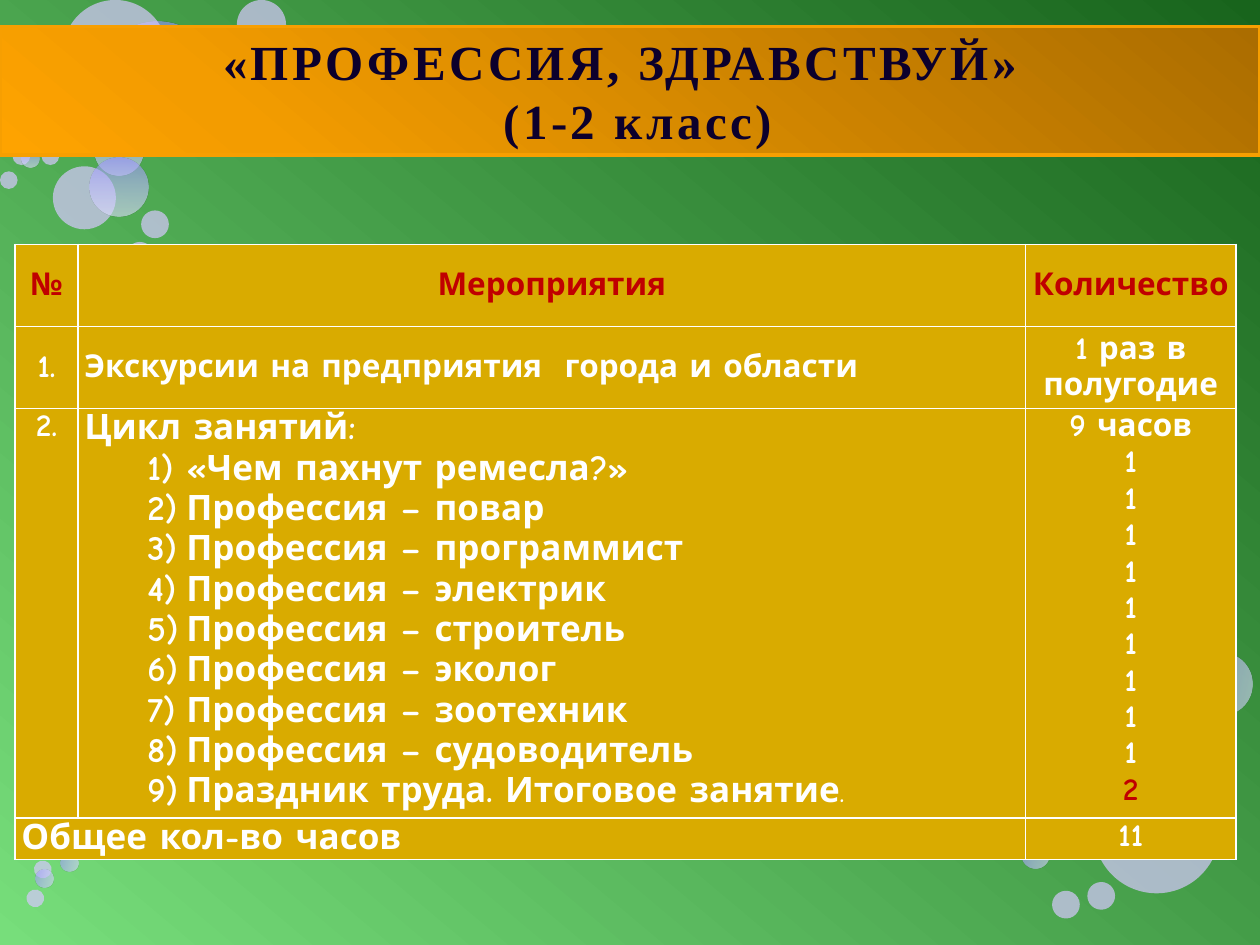
from lxml import etree
from pptx import Presentation
from pptx.dml.color import RGBColor
from pptx.enum.shapes import MSO_SHAPE
from pptx.enum.text import MSO_ANCHOR, MSO_AUTO_SIZE, PP_ALIGN
from pptx.oxml.ns import qn
from pptx.util import Inches, Pt

CENTER, LEFT = PP_ALIGN.CENTER, PP_ALIGN.LEFT
MIDDLE, TOP = MSO_ANCHOR.MIDDLE, MSO_ANCHOR.TOP
OVAL = MSO_SHAPE.OVAL

COLORS = {
    "ink": "0C002C", "red": "C00000", "white": "FFFFFF", "cell": "D9AB00",
    "frame": "F79F01", "bubble": "D7C8FE",
}
GREEN = [(0, "18641C"), (100, "77DE7B")]
ORANGE = [(0, "AB6D00"), (80, "F39C00"), (100, "FEA300")]
LILAC = [(0, "9890FF"), (50, "BFBBFF"), (100, "E0DEFF")]

# left, top, diameter, glossy
TOP_BUBBLES = [
    (0.75, 0.17, 1, True), (0.42, 1.32, 0.5, False), (0.75, 1, 0.39, True),
    (0.71, 1.25, 0.47, True), (0.5, 0, 0.83, False), (1.88, 0, 0.39, False),
    (1.83, 0.25, 0.47, True), (2.21, 0.33, 0.22, True), (1.12, 1.67, 0.22, False),
    (0.1, 1.17, 0.14, False), (1, 1.92, 0.22, False), (0, 1.36, 0.14, False),
    (0.17, 1.19, 0.14, True), (0.33, 1.17, 0.14, False),
]
BOTTOM_BUBBLES = [
    (8.68, 6.09, 1, False), (9.44, 5.18, 0.5, True), (9.07, 5.42, 0.39, False),
    (9.31, 5.44, 0.47, False), (8.59, 5.79, 0.83, True), (0.22, 6.47, 0.24, False),
    (8.08, 6.31, 0.47, False), (8.11, 6.67, 0.22, True), (8.35, 7.07, 0.22, False),
    (9.41, 4.79, 0.14, False), (8.63, 7, 0.22, False), (9.62, 4.74, 0.14, True),
    (9.42, 4.87, 0.14, True), (9.36, 5.02, 0.14, False), (0.27, 6.83, 0.14, False),
    (0.48, 6.78, 0.14, True), (0.28, 6.9, 0.14, True), (0.21, 7.06, 0.14, False),
]
TRADES = ["повар", "программист", "электрик", "строитель", "эколог",
          "зоотехник", "судоводитель"]
LESSONS = ["«Чем пахнут ремесла?»", *(f"Профессия – {trade}" for trade in TRADES),
           "Праздник труда. Итоговое занятие"]


def rgb(name):
    return RGBColor.from_string(COLORS[name])


def set_alpha(color, percent):
    etree.SubElement(color, qn("a:alpha")).set("val", str(percent * 1000))


def fill_gradient(fill, element, stops, angle, opacity=100):
    """Fill with any number of stops; angle is clockwise degrees."""
    fill.gradient()
    fill.gradient_angle = 360 - angle
    stop_list = element.find(f".//{qn('a:gsLst')}")
    for old_stop in list(stop_list):
        stop_list.remove(old_stop)
    for position, value in stops:
        stop = etree.SubElement(stop_list, qn("a:gs"), pos=str(position * 1000))
        color = etree.SubElement(stop, qn("a:srgbClr"), val=value)
        if opacity < 100:
            set_alpha(color, opacity)


def add_bubbles(slide, bubbles, tilted=False):
    for left, top, size, glossy in bubbles:
        bubble = slide.shapes.add_shape(
            OVAL, Inches(left), Inches(top), Inches(size), Inches(size))
        bubble.shadow.inherit = False
        bubble.line.fill.background()
        if glossy:
            fill_gradient(bubble.fill, bubble.element, LILAC, 90, 60)
        else:
            bubble.fill.solid()
            bubble.fill.fore_color.rgb = rgb("bubble")
            set_alpha(bubble.element.spPr.find(f".//{qn('a:srgbClr')}"), 70)
        if tilted:
            bubble.rotation = 103.3
            bubble.element.spPr.find(qn("a:xfrm")).set("flipV", "1")


def place_title(slide, left, top, width, height):
    title = slide.shapes.title
    title.left, title.top, title.width, title.height = left, top, width, height
    title.element.getparent().append(title.element)  # in front of the bubbles
    fill_gradient(title.fill, title.element, ORANGE, 130)
    title.line.color.rgb = rgb("frame")
    title.line.width = Pt(2)
    frame = title.text_frame
    frame.text = "«ПРОФЕССИЯ, ЗДРАВСТВУЙ» \v (1-2 класс)"
    frame.word_wrap = False
    frame.auto_size = MSO_AUTO_SIZE.NONE
    frame.vertical_anchor = MIDDLE
    heading = frame.paragraphs[0]
    heading.alignment = CENTER
    style_font(heading.font, 28, "ink", "Times New Roman")
    heading._p.pPr.find(qn("a:defRPr")).set("spc", "200")


def style_font(font, size, color, name="Comic Neue"):
    font.name, font.size, font.bold = name, Pt(size), True
    font.color.rgb = rgb(color)


def number_paragraph(paragraph):
    properties = paragraph._p.get_or_add_pPr()
    properties.set("marL", str(Inches(0.81)))
    properties.set("indent", str(Inches(-0.31)))
    numbering = etree.Element(qn("a:buAutoNum"), type="arabicParenR")
    properties.insert(0, numbering)


def style_cell(cell, anchor):
    cell.margin_left = cell.margin_right = Inches(0.05)
    cell.margin_top = cell.margin_bottom = 0
    cell.vertical_anchor = anchor
    properties = cell._tc.get_or_add_tcPr()
    for index, side in enumerate(("lnL", "lnR", "lnT", "lnB")):
        border = etree.Element(qn(f"a:{side}"), w=str(Pt(1)))
        paint = etree.SubElement(border, qn("a:solidFill"))
        etree.SubElement(paint, qn("a:srgbClr"), val=COLORS["white"])
        properties.insert(index, border)
    cell.fill.solid()
    cell.fill.fore_color.rgb = rgb("cell")


def write_cell(cell, lines, size=18, color="white", align=CENTER):
    cell.text = "\n".join(lines)
    for paragraph in cell.text_frame.paragraphs:
        paragraph.alignment = align
        style_font(paragraph.font, size, color)


def add_plan(slide, left, top, width, height):
    columns, rows = (0.5, 7.52, 1.67), (0.65, 0.65, 3.25, 0.33)
    plan = slide.shapes.add_table(
        len(rows), len(columns), left, top, width, height).table
    plan.first_row = plan.horz_banding = False
    for column, size in zip(plan.columns, columns):
        column.width = Inches(size)
    for index, size in enumerate(rows):
        plan.rows[index].height = Inches(size)
        for cell in plan.rows[index].cells:
            style_cell(cell, MIDDLE if index < 2 else TOP)
    plan.cell(3, 0).merge(plan.cell(3, 1))

    for index, heading in enumerate(("№", "Мероприятия", "Количество")):
        write_cell(plan.cell(0, index), [heading], color="red")
    write_cell(plan.cell(1, 0), ["1."])
    write_cell(plan.cell(1, 1), ["Экскурсии на предприятия  города и области"],
               align=LEFT)
    write_cell(plan.cell(1, 2), ["1 раз в полугодие"])
    write_cell(plan.cell(2, 0), ["2."])
    write_cell(plan.cell(3, 0), ["Общее кол-во часов"], 20, align=LEFT)
    write_cell(plan.cell(3, 2), ["11"])

    lessons = plan.cell(2, 1)
    write_cell(lessons, ["Цикл занятий:", *LESSONS], 20, align=LEFT)
    lesson_lines = lessons.text_frame.paragraphs
    for lesson in lesson_lines[1:]:
        number_paragraph(lesson)
    full_stop = lesson_lines[-1].add_run()
    full_stop.text = "."
    full_stop.font.size = Pt(14)

    hours = plan.cell(2, 2)
    write_cell(hours, ["9 часов", *["1"] * len(LESSONS), "2"])
    hours.text_frame.paragraphs[-1].font.color.rgb = rgb("red")


def main():
    deck = Presentation()
    deck.slide_width, deck.slide_height = Inches(10), Inches(7.5)
    slide = deck.slides.add_slide(deck.slide_layouts[5])
    fill_gradient(slide.background.fill, slide.element, GREEN, 130)
    add_bubbles(slide, TOP_BUBBLES)
    add_bubbles(slide, BOTTOM_BUBBLES, tilted=True)
    place_title(slide, 0, Inches(0.21), Inches(10), Inches(1.02))
    add_plan(slide, Inches(0.12), Inches(1.94), Inches(9.69), Inches(4.88))
    deck.save("out.pptx")


if __name__ == "__main__":
    main()
